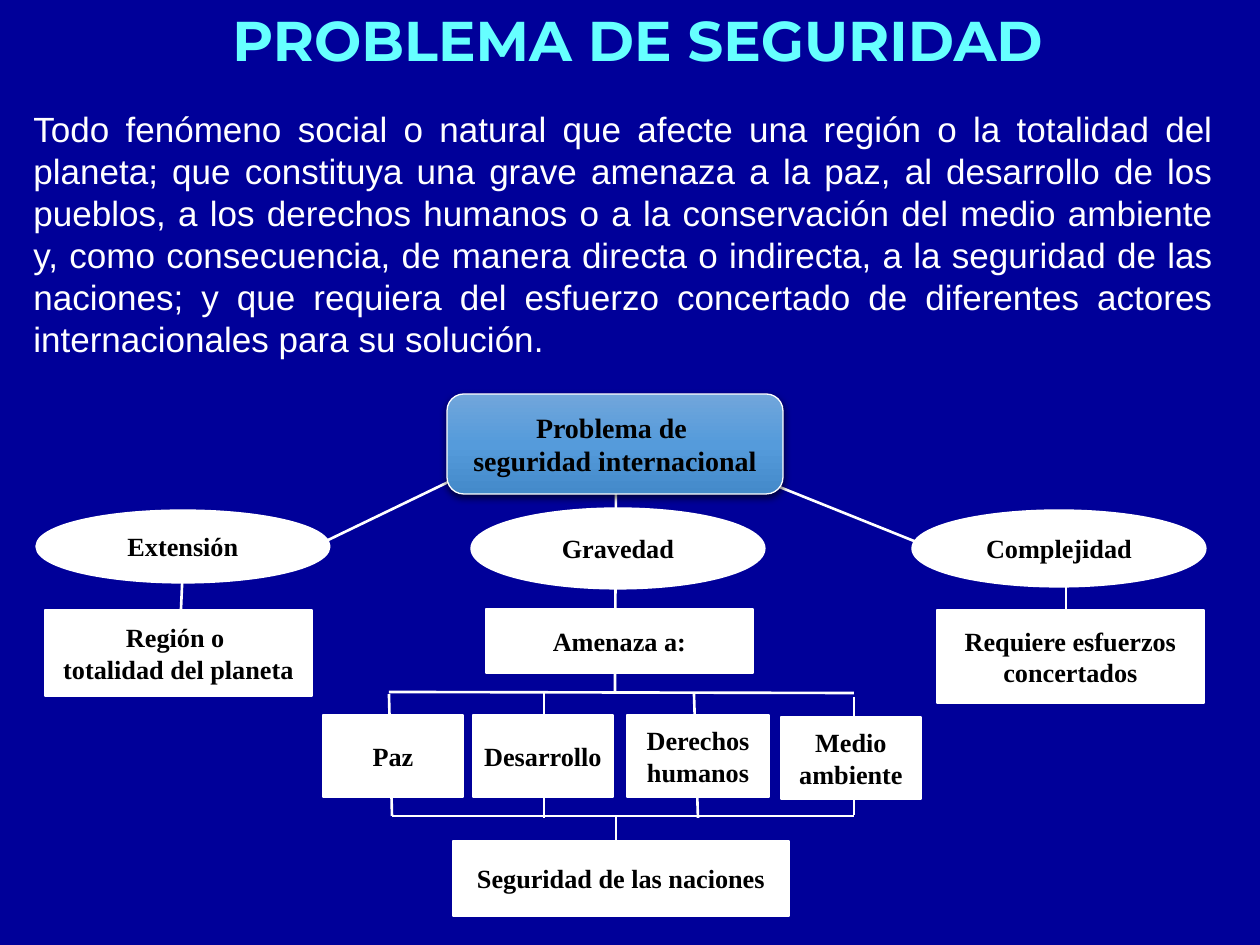
from dataclasses import dataclass

from pptx import Presentation
from pptx import util as u
from pptx.dml.color import RGBColor
from pptx.enum import shapes, text
from pptx.oxml import parse_xml
from pptx.oxml.ns import nsdecls, qn


@dataclass(frozen=True)
class Theme:
    background: str = "000099"
    title: str = "66FFFF"
    light: str = "FFFFFF"
    dark: str = "000000"
    gradient: tuple = ((0, "71A6DB"), (50, "559BDB"), (100, "448ACA"))
    title_font: str = "Montserrat"
    body_font: str = "Arial"
    diagram_font: str = "Times New Roman"
    title_size: int = 32
    body_size: int = 20
    root_size: int = 16
    node_size: int = 15


THEME = Theme()
SCALE = 914400 / 126
TITLE = "PROBLEMA DE SEGURIDAD"
DEFINITION = (
    "Todo fenómeno social o natural que afecte una región o la totalidad del planeta; "
    "que constituya una grave amenaza a la paz, al desarrollo de los pueblos, a los "
    "derechos humanos o a la conservación del medio ambiente y, como consecuencia, de "
    "manera directa o indirecta, a la seguridad de las naciones; y que requiera del "
    "esfuerzo concertado de diferentes actores internacionales para su solución."
)
ROOT = (["Problema de ", "seguridad internacional"], (447, 394, 336, 100))
CRITERIA = [
    (["Extensión"], (38, 512, 290, 69)),
    (["Gravedad"], (473, 510, 290, 77)),
    (["Complejidad"], (914, 512, 290, 73)),
]
BOXES = [
    (["Región o ", "totalidad del planeta"], (45, 610, 267, 86)),
    (["Amenaza a:"], (486, 609, 267, 64)),
    (["Requiere esfuerzos concertados"], (937, 610, 267, 93)),
    (["Paz"], (323, 715, 140, 82)),
    (["Desarrollo"], (473, 715, 140, 82)),
    (["Derechos humanos"], (627, 715, 142, 82)),
    (["Medio ambiente"], (781, 717, 140, 82)),
    (["Seguridad de las naciones"], (453, 841, 336, 75)),
]
LINES = [
    ((467, 473), (324, 542), 1.5),
    ((616, 480), (615, 694), 1.5),
    ((777, 486), (919, 543), 1.5),
    ((183, 563), (181, 610), 1.5),
    ((1066, 585), (1066, 631), 1.5),
    ((389, 692), (854, 693), 1.5),
    ((389, 694), (392, 816), 1.5),
    ((544, 692), (544, 818), 1.5),
    ((694, 694), (698, 818), 1.5),
    ((854, 697), (854, 815), 1.5),
    ((392, 816), (854, 816), 1),
    ((616, 816), (616, 858), 1.5),
]


def px(*values):
    return [u.Emu(round(value * SCALE)) for value in values]


def color(value):
    return RGBColor.from_string(value)


def assign(target, values):
    for name, value in values.items():
        setattr(target, name, value)


def write(shape, lines, font, size, ink, bold=False, align=text.PP_ALIGN.CENTER,
          anchor=text.MSO_ANCHOR.MIDDLE, insets=None):
    frame = shape.text_frame
    assign(frame, {"word_wrap": True, "auto_size": text.MSO_AUTO_SIZE.NONE,
                   "vertical_anchor": anchor})
    if insets:
        sides = ("margin_left", "margin_top", "margin_right", "margin_bottom")
        assign(frame, dict(zip(sides, px(*insets))))
    frame.text = "\n".join(lines)
    for paragraph in frame.paragraphs:
        paragraph.alignment = align
        run = paragraph.runs[0]
        assign(run.font, {"name": font, "size": u.Pt(size), "bold": bold})
        run.font.color.rgb = color(ink)


def add_line(slide, start, end, width):
    connector = slide.shapes.add_connector(
        shapes.MSO_CONNECTOR.STRAIGHT, *px(*start, *end))
    connector.line.color.rgb = color(THEME.light)
    connector.line.width = u.Pt(width)
    connector._element.spPr.append(parse_xml(f"<a:effectLst {nsdecls('a')}/>"))


def add_node(slide, node, kind, line_width, insets=(0, 0, 0, 0), size=THEME.node_size):
    lines, box = node
    shape = slide.shapes.add_shape(kind, *px(*box))
    shape.shadow.inherit = False
    shape.fill.solid()
    shape.fill.fore_color.rgb = color(THEME.light)
    shape.line.color.rgb = color(THEME.light)
    shape.line.width = u.Pt(line_width)
    write(shape, lines, THEME.diagram_font, size, THEME.dark, bold=True, insets=insets)
    return shape


def add_depth(shape):
    properties = shape._element.spPr
    stops = "".join(f'<a:gs pos="{position * 1000}"><a:srgbClr val="{value}"/></a:gs>'
                    for position, value in THEME.gradient)
    solid = properties.find(qn("a:solidFill"))
    properties.replace(solid, parse_xml(
        f'<a:gradFill {nsdecls("a")} rotWithShape="1"><a:gsLst>{stops}</a:gsLst>'
        '<a:lin ang="5400000" scaled="0"/></a:gradFill>'))
    properties.find(qn("a:effectLst")).append(parse_xml(
        f'<a:outerShdw {nsdecls("a")} blurRad="{u.Pt(4.5)}" dist="{u.Pt(1.5)}" '
        f'dir="5400000" algn="ctr" rotWithShape="0"><a:srgbClr val="{THEME.dark}">'
        '<a:alpha val="63000"/></a:srgbClr></a:outerShdw>'))


def main():
    presentation = Presentation()
    width, height = px(1260, 945)
    assign(presentation, {"slide_width": width, "slide_height": height})
    slide = presentation.slides.add_slide(presentation.slide_layouts[5])
    slide.background.fill.solid()
    slide.background.fill.fore_color.rgb = color(THEME.background)

    title = slide.shapes.title
    assign(title, dict(zip(("left", "top", "width", "height"), px(8, 10, 1260, 69))))
    write(title, [TITLE], THEME.title_font, THEME.title_size, THEME.title,
          bold=True, anchor=text.MSO_ANCHOR.BOTTOM)
    definition = slide.shapes.add_textbox(*px(21, 101, 1205, 267))
    write(definition, [DEFINITION], THEME.body_font, THEME.body_size, THEME.light,
          align=text.PP_ALIGN.JUSTIFY, anchor=text.MSO_ANCHOR.TOP)

    for line in LINES:
        add_line(slide, *line)
    kinds = shapes.MSO_SHAPE
    add_depth(add_node(slide, ROOT, kinds.ROUNDED_RECTANGLE, 0.75, size=THEME.root_size))
    for node in CRITERIA:
        add_node(slide, node, kinds.OVAL, 3, insets=(4, 0, 4, 0))
    for node in BOXES:
        add_node(slide, node, kinds.RECTANGLE, 1)
    presentation.save("out.pptx")


if __name__ == "__main__":
    main()
